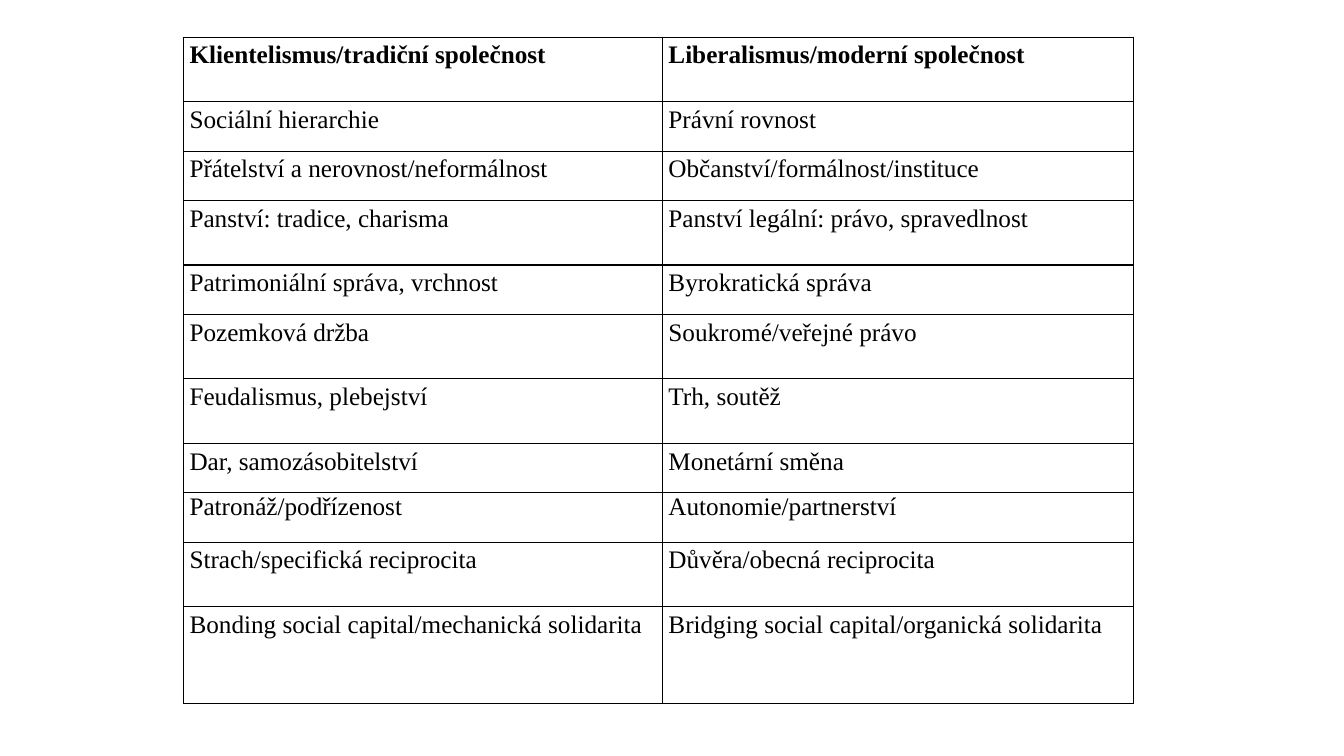
import lxml.etree
import pptx
import pptx.dml.color
import pptx.oxml.ns
import pptx.util

Inches = pptx.util.Inches
Pt = pptx.util.Pt
qn = pptx.oxml.ns.qn

INK = "000000"
COLS = [4.75, 4.67]
LOW, MID, HIGH = 0.49, 0.64, 0.96
ROWS = [
    (MID, "Klientelismus/tradiční společnost", "Liberalismus/moderní společnost"),
    (LOW, "Sociální hierarchie", "Právní rovnost"),
    (LOW, "Přátelství a nerovnost/neformálnost", "Občanství/formálnost/instituce"),
    (MID, "Panství: tradice, charisma", "Panství legální: právo, spravedlnost"),
    (LOW, "Patrimoniální správa, vrchnost", "Byrokratická správa"),
    (MID, "Pozemková držba", "Soukromé/veřejné právo"),
    (MID, "Feudalismus, plebejství", "Trh, soutěž"),
    (LOW, "Dar, samozásobitelství", "Monetární směna"),
    (LOW, "Patronáž/podřízenost", "Autonomie/partnerství"),
    (MID, "Strach/specifická reciprocita", "Důvěra/obecná reciprocita"),
    (HIGH, "Bonding social capital/mechanická solidarita",
     "Bridging social capital/organická solidarita"),
]
TIGHT = 8
INSETS = {
    "margin_left": Inches(0.06),
    "margin_right": Inches(0.06),
    "margin_top": 0,
    "margin_bottom": 0,
}
FONT = {"name": "Times New Roman", "size": Pt(18)}


def color(code):
    return pptx.dml.color.RGBColor.from_string(code)


def apply(item, values):
    for name, value in values.items():
        setattr(item, name, value)


def border(cell):
    props = cell._tc.get_or_add_tcPr()
    for side in ("lnL", "lnR", "lnT", "lnB"):
        line = lxml.etree.SubElement(props, qn(f"a:{side}"), w=str(Pt(1)))
        fill = lxml.etree.SubElement(line, qn("a:solidFill"))
        lxml.etree.SubElement(fill, qn("a:srgbClr"), val=INK)


def write(cell, text, bold, space):
    apply(cell, INSETS)
    border(cell)
    cell.fill.background()
    para = cell.text_frame.paragraphs[0]
    para.line_spacing = space
    run = para.add_run()
    run.text = text
    apply(run.font, {**FONT, "bold": bold})
    run.font.color.rgb = color(INK)


def grid(slide):
    frame = slide.shapes.add_table(
        len(ROWS), len(COLS), Inches(1.82), Inches(0.37),
        Inches(sum(COLS)), Inches(sum(row[0] for row in ROWS)))
    table = frame.table
    apply(table, {"first_row": False, "horz_banding": False})
    for col, width in zip(table.columns, COLS):
        col.width = Inches(width)
    for index, (height, *texts) in enumerate(ROWS):
        table.rows[index].height = Inches(height)
        space = 1.0 if index == TIGHT else 1.15
        for side, text in enumerate(texts):
            write(table.cell(index, side), text, index == 0, space)


def main():
    deck = pptx.Presentation()
    apply(deck, {"slide_width": Inches(13.33), "slide_height": Inches(7.5)})
    slide = deck.slides.add_slide(deck.slide_layouts[6])
    grid(slide)
    deck.save("out.pptx")


if __name__ == "__main__":
    main()
